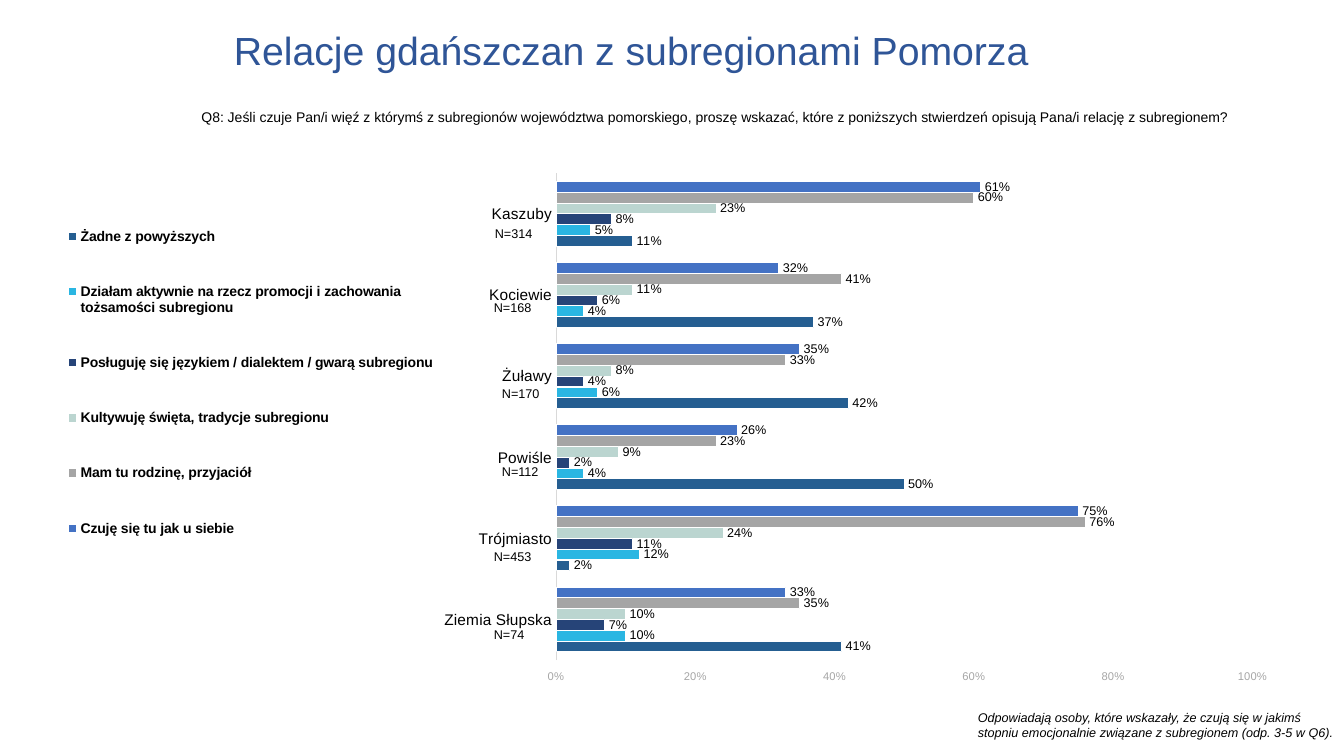
from dataclasses import dataclass

from lxml import etree
from pptx import Presentation
from pptx import util as u
from pptx.chart import data as chart_data
from pptx.dml import color
from pptx.enum import chart as kinds, text as text_kinds
from pptx.oxml import ns


@dataclass(frozen=True)
class Theme:
    font: str = "Arial"
    title: str = "2F5597"
    ink: str = "000000"
    axis_text: str = "A6A6A6"
    axis_line: str = "D9D9D9"
    bar_edge: str = "FFFFFF"
    title_size: float = 28
    category_size: float = 11
    body_size: float = 10
    small_size: float = 9
    scale_size: float = 8


@dataclass(frozen=True)
class Area:
    """Left, top, width and height in percent of the surrounding slide or chart."""
    left: float
    top: float
    width: float
    height: float


@dataclass(frozen=True)
class Caption:
    text: str
    area: Area
    size: float
    color: str
    italic: bool = False
    is_title: bool = False


@dataclass(frozen=True)
class Region:
    name: str
    sample: int
    left: float
    top: float


@dataclass(frozen=True)
class Statement:
    name: str
    color: str
    percents: tuple[int, ...]


THEME = Theme()
WIDTH, HEIGHT = u.Inches(13.33), u.Inches(7.5)

REGIONS = [
    Region("Kaszuby", 314, 36.08, 29.2),
    Region("Kociewie", 168, 36.01, 39.07),
    Region("Żuławy", 170, 36.61, 50.4),
    Region("Powiśle", 112, 36.61, 60.67),
    Region("Trójmiasto", 453, 36.01, 71.92),
    Region("Ziemia Słupska", 74, 36.01, 82.27),
]
STATEMENTS = [
    Statement("Czuję się tu jak u siebie", "4472C4", (61, 32, 35, 26, 75, 33)),
    Statement("Mam tu rodzinę, przyjaciół", "A5A5A5", (60, 41, 33, 23, 76, 35)),
    Statement("Kultywuję święta, tradycje subregionu", "BBD5D0", (23, 11, 8, 9, 24, 10)),
    Statement("Posługuję się językiem / dialektem / gwarą subregionu", "264478",
              (8, 6, 4, 2, 11, 7)),
    Statement("Działam aktywnie na rzecz promocji i zachowania tożsamości subregionu",
              "2AB6E2", (5, 4, 6, 4, 12, 10)),
    Statement("Żadne z powyższych", "255E91", (11, 37, 42, 50, 2, 41)),
]
CAPTIONS = [
    Caption("Relacje gdańszczan z subregionami Pomorza", Area(17.4, 0.93, 73.74, 12),
            THEME.title_size, THEME.title, is_title=True),
    Caption("Q8: Jeśli czuje Pan/i więź z którymś z subregionów województwa pomorskiego, "
            "proszę wskazać, które z poniższych stwierdzeń opisują Pana/i relację z subregionem?",
            Area(14.25, 13.67, 79.97, 3.6), THEME.body_size, THEME.ink),
    Caption("Odpowiadają osoby, które wskazały, że czują się w jakimś stopniu emocjonalnie "
            "związane z subregionem (odp. 3-5 w Q6).",
            Area(72.02, 93.2, 27.98, 5.33), THEME.small_size, THEME.ink, italic=True),
] + [
    Caption(f"N={region.sample}", Area(region.left, region.top, 6.9, 3.33),
            THEME.small_size, THEME.ink)
    for region in REGIONS
]
CHART_AREA = Area(4.28, 22.67, 90.92, 68.27)
PLOT_AREA = Area(40.8, 0.4, 57, 94.3)
LEGEND_AREA = Area(0.3, 3.4, 31, 75)


def place(area: Area) -> tuple[int, int, int, int]:
    return (int(WIDTH * area.left / 100), int(HEIGHT * area.top / 100),
            int(WIDTH * area.width / 100), int(HEIGHT * area.height / 100))


def set_font(font, size: float, hex_color: str, bold: bool = False) -> None:
    font.name, font.size, font.bold = THEME.font, u.Pt(size), bold
    font.color.rgb = color.RGBColor.from_string(hex_color)


def set_line(line, hex_color: str) -> None:
    line.width = u.Pt(0.75)
    line.color.rgb = color.RGBColor.from_string(hex_color)


def add_caption(page, caption: Caption) -> None:
    frame = page.shapes.add_textbox(*place(caption.area)).text_frame
    frame.word_wrap = True
    para = frame.paragraphs[0]
    para.text = caption.text
    set_font(para.font, caption.size, caption.color)
    para.font.italic = caption.italic
    if caption.is_title:
        frame.margin_left = frame.margin_top = frame.margin_right = frame.margin_bottom = 0
        frame.vertical_anchor = text_kinds.MSO_ANCHOR.MIDDLE
        para.line_spacing = 0.9


def make_layout(area: Area, inner: bool = False):
    """Build a manual chart layout."""
    layout = etree.Element(ns.qn("c:layout"))
    manual = etree.SubElement(layout, ns.qn("c:manualLayout"))
    entries = [("layoutTarget", "inner")] if inner else []
    entries += [("xMode", "edge"), ("yMode", "edge"),
                ("x", area.left / 100), ("y", area.top / 100),
                ("w", area.width / 100), ("h", area.height / 100)]
    for tag, value in entries:
        etree.SubElement(manual, ns.qn(f"c:{tag}")).set("val", str(value))
    return layout


def style_axes(chart) -> None:
    regions, scale = chart.category_axis, chart.value_axis
    for axis in (regions, scale):
        axis.major_tick_mark = axis.minor_tick_mark = kinds.XL_TICK_MARK.NONE
        axis.has_major_gridlines = False
    regions.reverse_order = True
    set_font(regions.tick_labels.font, THEME.category_size, THEME.ink)
    set_line(regions.format.line, THEME.axis_line)
    # With the regions reversed, the high end is the bottom
    scale.tick_label_position = kinds.XL_TICK_LABEL_POSITION.HIGH
    scale.minimum_scale, scale.maximum_scale, scale.major_unit = 0, 1, 0.2
    scale.tick_labels.number_format = "0%"
    scale.tick_labels.number_format_is_linked = False
    set_font(scale.tick_labels.font, THEME.scale_size, THEME.axis_text)
    scale.format.line.fill.background()


def style_series(series, statement: Statement) -> None:
    series.format.fill.solid()
    series.format.fill.fore_color.rgb = color.RGBColor.from_string(statement.color)
    set_line(series.format.line, THEME.bar_edge)
    labels = series.data_labels
    labels.show_value = True
    labels.position = kinds.XL_LABEL_POSITION.OUTSIDE_END
    labels.number_format = "###0%"
    labels.number_format_is_linked = False
    set_font(labels.font, THEME.small_size, THEME.ink)


def add_relations_chart(page) -> None:
    table = chart_data.CategoryChartData(number_format="0%")
    table.categories = [region.name for region in REGIONS]
    for statement in STATEMENTS:
        table.add_series(statement.name, [value / 100 for value in statement.percents])
    chart = page.shapes.add_chart(
        kinds.XL_CHART_TYPE.BAR_CLUSTERED, *place(CHART_AREA), table).chart
    chart.has_title = False
    set_font(chart.font, THEME.body_size, THEME.ink)
    style_axes(chart)

    # Bars
    plot = chart.plots[0]
    plot.gap_width, plot.overlap, plot.vary_by_categories = 150, 0, False
    for series, statement in zip(plot.series, STATEMENTS):
        style_series(series, statement)

    # Legend
    chart.has_legend = True
    chart.legend.position = kinds.XL_LEGEND_POSITION.LEFT
    chart.legend.include_in_layout = False
    set_font(chart.legend.font, THEME.body_size, THEME.ink, bold=True)

    # Manual layouts of plot and legend
    plot_area = chart.element.find(f".//{ns.qn('c:plotArea')}")
    legend = chart.element.find(f".//{ns.qn('c:legend')}")
    for parent in (plot_area, legend):
        for layout in parent.findall(ns.qn("c:layout")):
            parent.remove(layout)
    plot_area.insert(0, make_layout(PLOT_AREA, inner=True))
    legend.find(ns.qn("c:legendPos")).addnext(make_layout(LEGEND_AREA))


def main() -> None:
    deck = Presentation()
    deck.slide_width, deck.slide_height = WIDTH, HEIGHT
    page = deck.slides.add_slide(deck.slide_layouts[6])
    add_relations_chart(page)
    for caption in CAPTIONS:
        add_caption(page, caption)
    deck.save("out.pptx")


if __name__ == "__main__":
    main()
